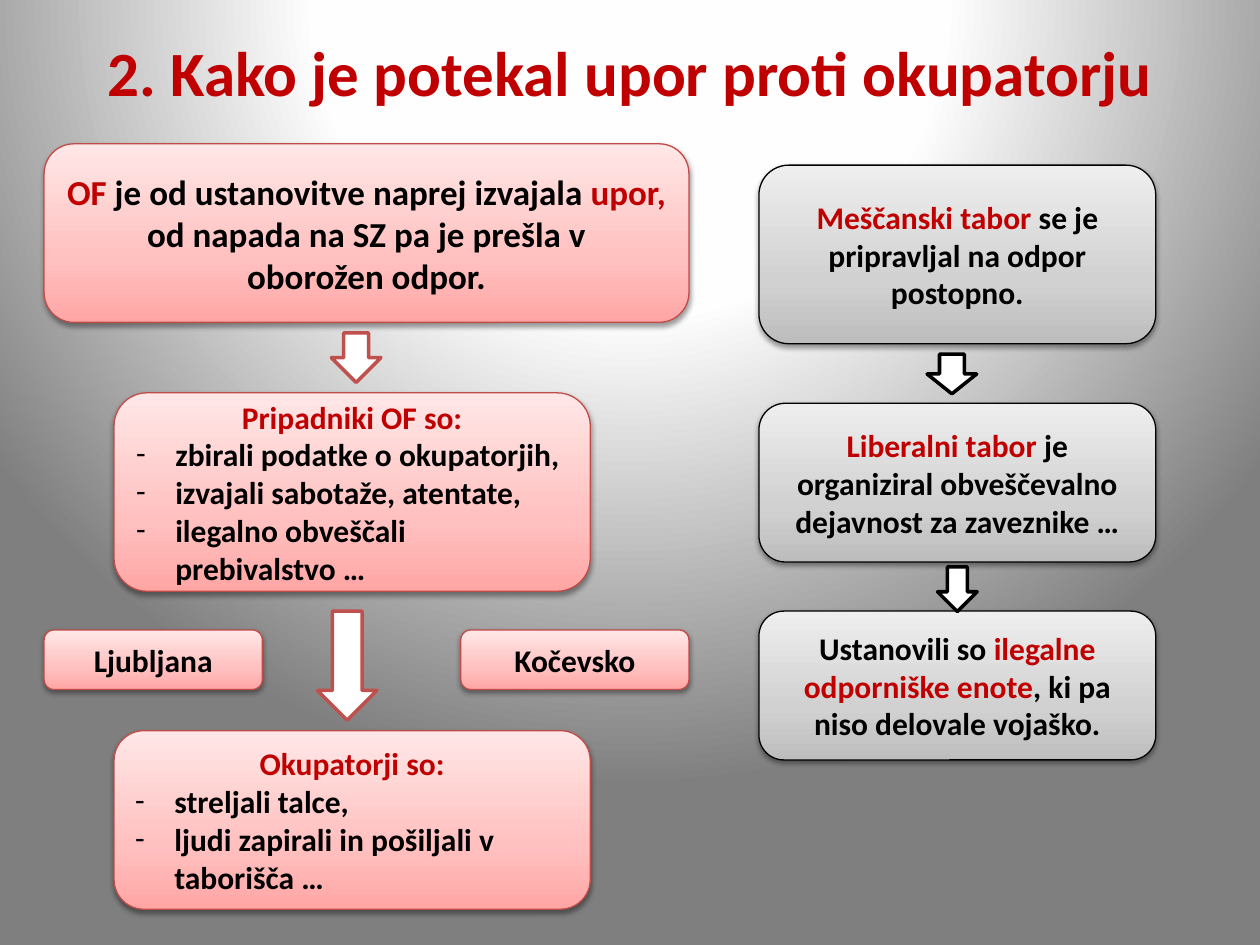
"""Builds a slide on how the resistance to the occupier unfolded."""
from lxml import etree
from pptx import Presentation
from pptx import util as u
from pptx.dml.color import RGBColor
from pptx.enum import shapes, text
from pptx.oxml.ns import qn

RED, BLACK, WHITE = "C00000", "000000", "FFFFFF"
TITLE = "2. Kako je potekal upor proti okupatorju"
BACK = [(0, WHITE), (40, "FEFEFE"), (100, "7F7F7F")]
LOOKS = {
    "pink": {"stops": [(0, "FFA6A5"), (35, "FFC0BF"), (100, "FFE7E7")],
             "edge": "BF4C48", "arrow": "C0504D"},
    "gray": {"stops": [(0, "BDBDBD"), (35, "D1D1D1"), (100, "EEEEEE")],
             "edge": BLACK, "arrow": BLACK},
}
# Text between stars is red; a leading dash makes a list item.
BOXES = [
    ("pink", (0.89, 2.9, 13, 3.6), 20,
     ["*OF* je od ustanovitve naprej izvajala *upor,*",
      "od napada na SZ pa je prešla v", "oborožen odpor."]),
    ("pink", (2.3, 7.92, 9.6, 4), 18,
     ["*Pripadniki OF so:*", "-zbirali podatke o okupatorjih,",
      "-izvajali sabotaže, atentate,", "-ilegalno obveščali prebivalstvo …"]),
    ("pink", (0.89, 12.7, 4.4, 1.2), 18, ["Ljubljana"]),
    ("pink", (9.29, 12.7, 4.6, 1.2), 18, ["Kočevsko"]),
    ("pink", (2.3, 14.73, 9.6, 3.6), 18,
     ["*Okupatorji so:*", "-streljali talce,",
      "-ljudi zapirali in pošiljali v taborišča …"]),
    ("gray", (15.3, 3.33, 8, 3.6), 18,
     ["*Meščanski tabor* se je pripravljal na odpor postopno."]),
    ("gray", (15.3, 8.13, 8, 3.2), 18,
     ["*Liberalni tabor* je organiziral obveščevalno dejavnost za zaveznike …"]),
    ("gray", (15.3, 12.32, 8, 3), 18,
     ["Ustanovili so *ilegalne odporniške enote*, ki pa niso delovale vojaško."]),
]
ARROWS = [
    ("pink", (6.68, 6.71, 1, 1)),
    ("pink", (6.4, 12.32, 1.2, 2.2)),
    ("gray", (18.69, 7.14, 1, 0.8)),
    ("gray", (18.9, 11.43, 0.8, 0.9)),
]


def tint(color, value):
    color.rgb = RGBColor.from_string(value)


def put(obj, **values):
    for name, value in values.items():
        setattr(obj, name, value)


def node(base, tag, **values):
    return etree.SubElement(base, qn("a:" + tag),
                            {key: str(val) for key, val in values.items()})


def blend(grad, stops):
    for kid in list(grad):
        grad.remove(kid)
    group = node(grad, "gsLst")
    for pos, value in stops:
        node(node(group, "gs", pos=pos * 1000), "srgbClr", val=value)


def write(par, line, size):
    for num, part in enumerate(line.split("*")):
        if part:
            run = par.add_run()
            run.text = part
            put(run.font, name="Calibri", size=u.Pt(size), bold=True)
            tint(run.font.color, RED if num % 2 else BLACK)


def shape(slide, kind, spot, edge, width):
    item = slide.shapes.add_shape(kind, *map(u.Cm, spot))
    item.shadow.inherit = False
    tint(item.line.color, edge)
    item.line.width = u.Pt(width)
    return item


def box(slide, look, spot, size, lines):
    item = shape(slide, shapes.MSO_SHAPE.ROUNDED_RECTANGLE, spot, look["edge"], 0.75)
    item.fill.gradient()
    props = item._element.spPr
    grad = props.find(qn("a:gradFill"))
    blend(grad, look["stops"])
    node(grad, "lin", ang=270 * 60000, scaled=0)
    shade = node(props.find(qn("a:effectLst")), "outerShdw", blurRad=u.Pt(3.1),
                 dist=u.Pt(1.6), dir=90 * 60000, rotWithShape=0)
    node(node(shade, "srgbClr", val=BLACK), "alpha", val=38000)
    frame = item.text_frame
    put(frame, word_wrap=True, vertical_anchor=text.MSO_ANCHOR.MIDDLE)
    for num, line in enumerate(lines):
        par = frame.add_paragraph() if num else frame.paragraphs[0]
        listed = line.startswith("-")
        par.alignment = text.PP_ALIGN.LEFT if listed else text.PP_ALIGN.CENTER
        if listed:
            form = par._p.get_or_add_pPr()
            form.set("marL", str(u.Cm(0.79)))
            form.set("indent", str(-u.Cm(0.79)))
            node(form, "buFont", typeface="Calibri")
            node(form, "buChar", char="-")
        write(par, line.removeprefix("-"), size)


def arrow(slide, look, spot):
    item = shape(slide, shapes.MSO_SHAPE.DOWN_ARROW, spot, look["arrow"], 2)
    item.fill.solid()
    tint(item.fill.fore_color, WHITE)


def main():
    deck = Presentation()
    put(deck, slide_width=u.Cm(25.4), slide_height=u.Cm(19.05))
    slide = deck.slides.add_slide(deck.slide_layouts[5])

    slide.background.fill.gradient()
    grad = slide._element.find(".//" + qn("a:gradFill"))
    blend(grad, BACK)
    node(node(grad, "path", path="circle"), "fillToRect",
         l=50000, t=-80000, r=50000, b=180000)

    head = slide.shapes.title
    put(head, left=u.Cm(1.27), top=u.Cm(0.76), width=u.Cm(22.86), height=u.Cm(1.37))
    put(head.text_frame, vertical_anchor=text.MSO_ANCHOR.MIDDLE,
        auto_size=text.MSO_AUTO_SIZE.NONE)
    par = head.text_frame.paragraphs[0]
    par.alignment = text.PP_ALIGN.CENTER
    write(par, f"*{TITLE}*", 36)

    for look, *rest in BOXES:
        box(slide, LOOKS[look], *rest)
    for look, spot in ARROWS:
        arrow(slide, LOOKS[look], spot)
    deck.save("out.pptx")


if __name__ == "__main__":
    main()
